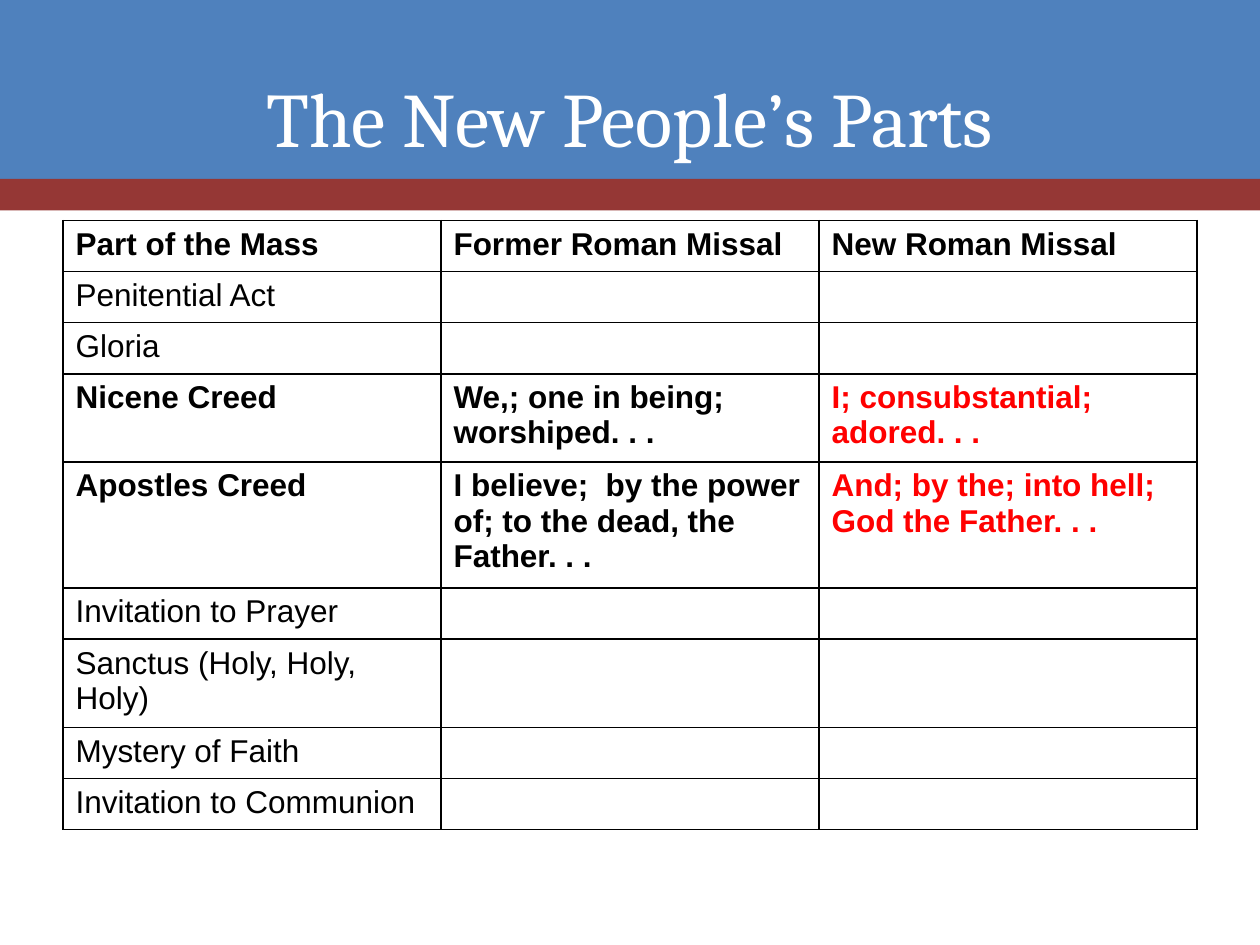
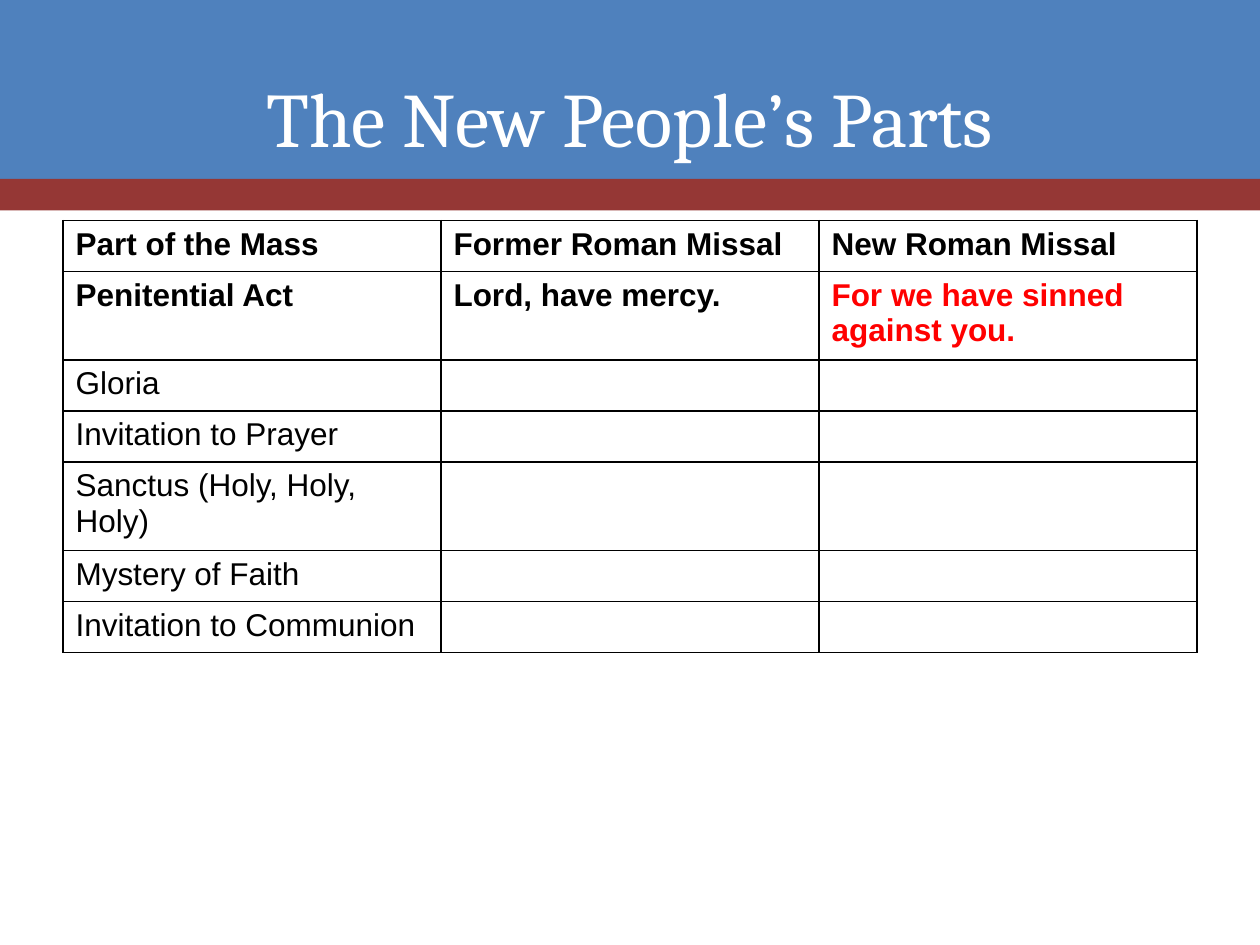
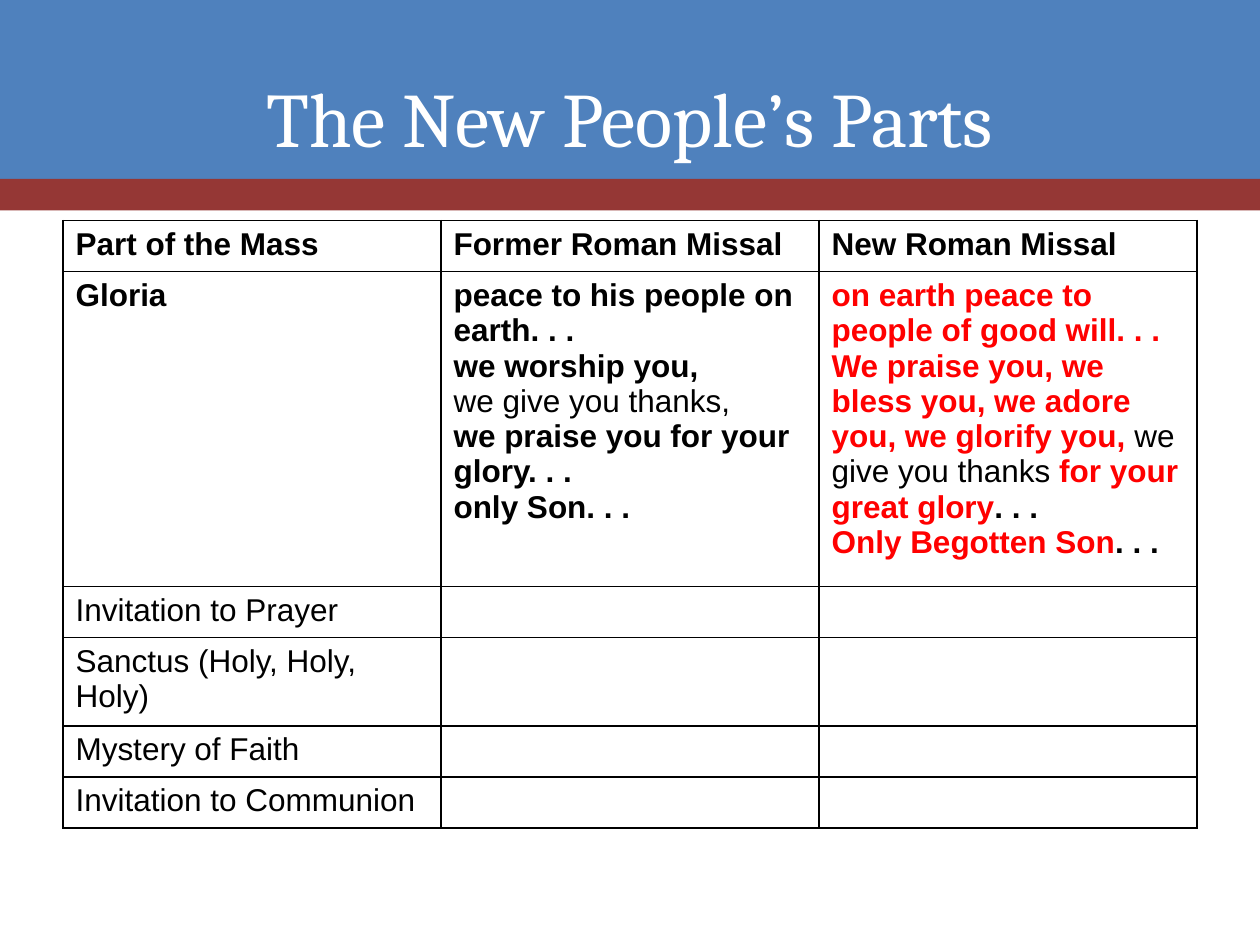
from dataclasses import dataclass

from lxml.etree import SubElement
from pptx import Presentation
from pptx.dml.color import RGBColor as RGB
from pptx.enum.shapes import MSO_SHAPE as Shape
from pptx.enum.text import MSO_ANCHOR as Anchor, PP_ALIGN as Align
from pptx.oxml.ns import qn
from pptx.util import Pt


@dataclass(frozen=True)
class Theme:
    blue: RGB = RGB(0x4F, 0x81, 0xBD)
    maroon: RGB = RGB(0x95, 0x37, 0x35)
    white: RGB = RGB(0xFF, 0xFF, 0xFF)
    black: RGB = RGB(0, 0, 0)
    red: RGB = RGB(0xFF, 0, 0)
    title_font: str = "Cambria"
    body_font: str = "Arial"
    title_size: int = 44
    body_size: int = 18
    row: float = 29.2
    tall_row: float = 50.4


T = Theme()

# Run styles: (bold, colour)
PLAIN = (False, T.black)
BOLD = (True, T.black)
NEW = (True, T.red)


class Deck:
    def __init__(self, theme):
        self.t = theme
        self.prs = Presentation()
        self.prs.slide_width, self.prs.slide_height = Pt(720), Pt(540)
        self.s = None

    def slide(self, title):
        self.s = self.prs.slides.add_slide(self.prs.slide_layouts[6])
        self.band(0, 102.24, self.t.blue)
        self.band(102.24, 18, self.t.maroon)
        self.title(title)

    def band(self, top, height, colour):
        sp = self.s.shapes.add_shape(
            Shape.RECTANGLE, 0, Pt(top), self.prs.slide_width, Pt(height))
        sp.shadow.inherit = False
        sp.fill.solid()
        sp.fill.fore_color.rgb = colour
        sp.line.fill.background()

    def title(self, text):
        tf = self.s.shapes.add_textbox(Pt(36), Pt(21.6), Pt(648), Pt(90)).text_frame
        tf.word_wrap = True
        tf.vertical_anchor = Anchor.MIDDLE
        p = tf.paragraphs[0]
        p.text = text
        p.alignment = Align.CENTER
        p.font.name, p.font.size = self.t.title_font, Pt(self.t.title_size)
        p.font.color.rgb = self.t.white

    def table(self, rows, tall=()):
        """Rows hold cells, cells hold paragraphs, paragraphs hold (text, style)."""
        heights = [self.t.tall_row if i in tall else self.t.row
                   for i in range(len(rows))]
        tbl = self.s.shapes.add_table(
            len(rows), 3, Pt(36), Pt(126), Pt(648), Pt(sum(heights))).table
        tbl.first_row = tbl.horz_banding = False
        for i, (row, height) in enumerate(zip(rows, heights)):
            tbl.rows[i].height = Pt(height)
            for j, paragraphs in enumerate(row):
                self.cell(tbl.cell(i, j), paragraphs)

    def cell(self, cell, paragraphs):
        self.borders(cell)
        cell.fill.background()
        tf = cell.text_frame
        for i, runs in enumerate(paragraphs):
            p = tf.add_paragraph() if i else tf.paragraphs[0]
            p.font.name, p.font.size = self.t.body_font, Pt(self.t.body_size)
            for text, style in runs:
                self.run(p, text, style)

    def run(self, p, text, style):
        for i, line in enumerate(text.split("\n")):
            if i:
                p.add_line_break()
            if line:
                r = p.add_run()
                r.text = line
                r.font.bold, r.font.color.rgb = style

    def borders(self, cell):
        pr = cell._tc.get_or_add_tcPr()
        for side in ("lnL", "lnR", "lnT", "lnB"):
            ln = SubElement(pr, qn(f"a:{side}"), w=str(Pt(1)))
            fill = SubElement(ln, qn("a:solidFill"))
            SubElement(fill, qn("a:srgbClr"), val=str(self.t.black))


def line(text, style):
    """A cell with one paragraph in one style."""
    return [[(text, style)]]


def part(name):
    """A row whose comparison is still blank."""
    return [line(name, PLAIN), [[]], [[]]]


def compared(name, former, new):
    return [line(name, BOLD), line(former, BOLD), line(new, NEW)]


# Rows that the slides share
TITLE = "The New People’s Parts"
HEADER = [line(text, BOLD) for text in
          ("Part of the Mass", "Former Roman Missal", "New Roman Missal")]
LATER_PARTS = [part(name) for name in
               ("Invitation to Prayer", "Sanctus (Holy, Holy, Holy)",
                "Mystery of Faith", "Invitation to Communion")]


def main():
    deck = Deck(T)

    # Creeds
    deck.slide(TITLE)
    deck.table([
        HEADER,
        part("Penitential Act"),
        part("Gloria"),
        compared("Nicene Creed", "We,; one in being; worshiped. . .",
                 "I; consubstantial; adored. . ."),
        compared("Apostles Creed",
                 "I believe;  by the power of; to the dead, the Father. . .",
                 "And; by the; into hell; God the Father. . ."),
        *LATER_PARTS,
    ], tall=(3, 4))

    # Penitential Act
    deck.slide(TITLE)
    deck.table([
        HEADER,
        compared("Penitential Act", "Lord, have mercy.",
                 "For we have sinned against you."),
        part("Gloria"),
        *LATER_PARTS,
    ], tall=(1,))

    # Gloria
    former_gloria = [
        [("peace to his people on earth. . .", BOLD)],
        [("we worship you, \n", BOLD), ("we give you thanks, \n", PLAIN),
         ("we praise you for your glory. . .", BOLD)],
        [("only Son. . .", BOLD)],
    ]
    new_gloria = [
        [("on earth peace to people of good will. . .", NEW)],
        [("We praise you, we bless you, we adore you, we glorify you, ", NEW),
         ("we give you thanks ", PLAIN), ("for your great glory", NEW),
         (". . .", BOLD)],
        [("Only Begotten Son", NEW), (". . .", BOLD)],
    ]
    deck.slide(TITLE)
    deck.table([
        HEADER,
        [line("Gloria", BOLD), former_gloria, new_gloria],
        *LATER_PARTS,
    ])

    deck.prs.save("out.pptx")


if __name__ == "__main__":
    main()
